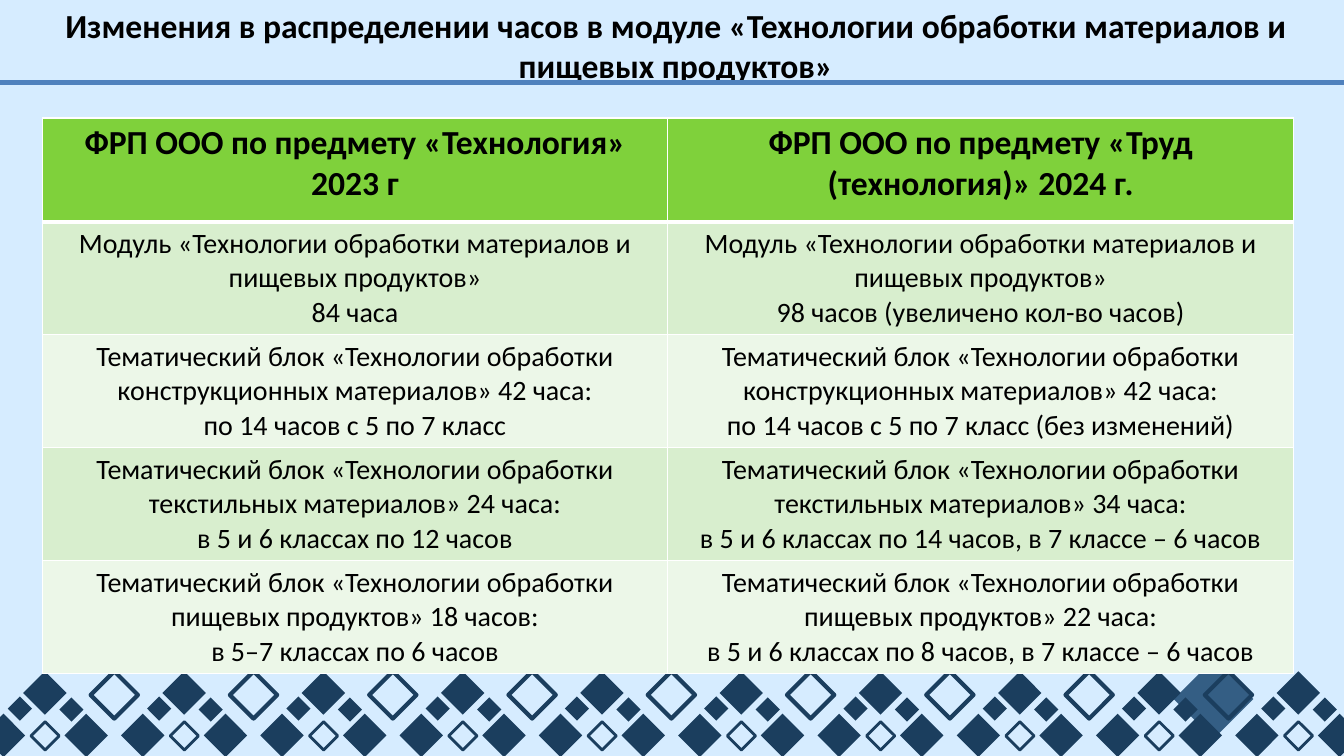
"""Slide comparing module hours in the 2023 and 2024 technology programmes."""
import pptx
import pptx.dml.color
import pptx.enum.shapes
import pptx.enum.text
import pptx.oxml.ns
import pptx.util
from lxml import etree

Pt = pptx.util.Pt
CENTER = pptx.enum.text.PP_ALIGN.CENTER

HEADING = "Изменения в распределении часов в модуле «Технологии обработки материалов и пищевых продуктов»"
HOURS = [
    [["ФРП ООО по предмету «Технология» 2023 г"],
     ["ФРП ООО по предмету «Труд (технология)» 2024 г."]],
    [["Модуль «Технологии обработки материалов и пищевых продуктов»", "84 часа"],
     ["Модуль «Технологии обработки материалов и пищевых продуктов»",
      "98 часов (увеличено кол-во часов)"]],
    [["Тематический блок «Технологии обработки конструкционных материалов» 42 часа:",
      "по 14 часов с 5 по 7 класс"],
     ["Тематический блок «Технологии обработки конструкционных материалов» 42 часа:",
      "по 14 часов с 5 по 7 класс (без изменений)"]],
    [["Тематический блок «Технологии обработки текстильных материалов» 24 часа:",
      "в 5 и 6 классах по 12 часов"],
     ["Тематический блок «Технологии обработки текстильных материалов» 34 часа:",
      "в 5 и 6 классах по 14 часов, в 7 классе – 6 часов"]],
    [["Тематический блок «Технологии обработки пищевых продуктов» 18 часов:",
      "в 5–7 классах по 6 часов"],
     ["Тематический блок «Технологии обработки пищевых продуктов» 22 часа:",
      "в 5 и 6 классах по 8 часов, в 7 классе – 6 часов"]],
]
COLORS = {
    "sky": "D6ECFF", "navy": "1B3E5E", "steel": "345E84", "rule": "4F81BD",
    "header": "7FD13B", "odd": "D8EECE", "even": "ECF7E8",
    "border": "FFFFFF", "text": "000000",
}
HEADING_FONT = {"name": "Calibri", "size": Pt(24), "bold": True}
BODY_FONT = {"name": "Calibri", "size": Pt(20), "bold": False}
HEADING_BOX = {"left": Pt(30.2), "top": Pt(0), "width": Pt(905.8), "height": Pt(65.5)}
HEADING_FRAME = {
    "word_wrap": True,
    "auto_size": pptx.enum.text.MSO_AUTO_SIZE.NONE,
    "vertical_anchor": pptx.enum.text.MSO_ANCHOR.TOP,
}

SLIDE_WIDTH, SLIDE_HEIGHT = 960.5, 540
RULE_Y = 59
TABLE_LEFT, TABLE_TOP, COLUMN_WIDTH = 30.2, 84.3, 447.1
HEADER_HEIGHT, ROW_HEIGHT = 74.2, 79.2

MOTIF_STEP, MOTIF_COUNT = 99.53, 10
MOTIF = [
    (-13, 509.8, 31, 0), (22.1, 515.5, 20.2, 2), (16.6, 479.5, 31, 0),
    (46.1, 509.8, 31, 0), (5.6, 497.5, 17.3, 0), (42.4, 498.2, 17.3, 0),
]
LARGE_DIAMOND = (64.8, 479.5, 33.8, 3)
ACCENT_DIAMOND = (838.8, 470.9, 56.9, 0)


def rgb(color):
    return pptx.dml.color.RGBColor.from_string(COLORS[color])


def apply(target, values):
    for key, value in values.items():
        setattr(target, key, value)


def paint(fill, color):
    fill.solid()
    fill.fore_color.rgb = rgb(color)


def add_diamond(slide, left, top, size, outline, color="navy"):
    diamond = slide.shapes.add_shape(
        pptx.enum.shapes.MSO_SHAPE.DIAMOND, Pt(left), Pt(top), Pt(size), Pt(size))
    diamond.shadow.inherit = False
    if outline:
        diamond.fill.background()
        diamond.line.color.rgb = rgb(color)
        diamond.line.width = Pt(outline)
    else:
        paint(diamond.fill, color)
        diamond.line.fill.background()


def add_ornament(slide):
    add_diamond(slide, *ACCENT_DIAMOND, "steel")
    for index in range(MOTIF_COUNT):
        last = index == MOTIF_COUNT - 1
        for left, *rest in MOTIF if last else MOTIF + [LARGE_DIAMOND]:
            add_diamond(slide, left + index * MOTIF_STEP, *rest)


def add_rule(slide):
    rule = slide.shapes.add_connector(
        pptx.enum.shapes.MSO_CONNECTOR.STRAIGHT, Pt(0), Pt(RULE_Y), Pt(SLIDE_WIDTH), Pt(RULE_Y))
    rule.line.color.rgb = rgb("rule")
    rule.line.width = Pt(3)
    etree.SubElement(rule._element.spPr, pptx.oxml.ns.qn("a:effectLst"))


def write(frame, lines, font):
    for index, line in enumerate(lines):
        paragraph = frame.paragraphs[0] if index == 0 else frame.add_paragraph()
        paragraph.alignment = CENTER
        run = paragraph.add_run()
        run.text = line
        apply(run.font, font)
        run.font.color.rgb = rgb("text")


def add_borders(cell, widths):
    properties = cell._tc.get_or_add_tcPr()
    for side, width in widths.items():
        border = etree.SubElement(
            properties, pptx.oxml.ns.qn("a:ln" + side), w=str(int(Pt(width))))
        solid = etree.SubElement(border, pptx.oxml.ns.qn("a:solidFill"))
        etree.SubElement(solid, pptx.oxml.ns.qn("a:srgbClr"), val=COLORS["border"])


def add_heading(slide):
    heading = slide.shapes.title
    apply(heading, HEADING_BOX)
    apply(heading.text_frame, HEADING_FRAME)
    write(heading.text_frame, [HEADING], HEADING_FONT)


def add_hours(slide):
    row_count, column_count = len(HOURS), len(HOURS[0])
    hours = slide.shapes.add_table(
        row_count, column_count, Pt(TABLE_LEFT), Pt(TABLE_TOP), Pt(column_count * COLUMN_WIDTH),
        Pt(HEADER_HEIGHT + (row_count - 1) * ROW_HEIGHT)).table
    for column in hours.columns:
        column.width = Pt(COLUMN_WIDTH)
    for index, row in enumerate(HOURS):
        is_header = index == 0
        hours.rows[index].height = Pt(HEADER_HEIGHT if is_header else ROW_HEIGHT)
        color = "header" if is_header else "odd" if index % 2 else "even"
        borders = {"L": 1, "R": 1, "T": 3 if index == 1 else 1, "B": 3 if is_header else 1}
        for position, lines in enumerate(row):
            cell = hours.cell(index, position)
            add_borders(cell, borders)
            paint(cell.fill, color)
            write(cell.text_frame, lines, HEADING_FONT if is_header else BODY_FONT)


def main():
    deck = pptx.Presentation()
    apply(deck, {"slide_width": Pt(SLIDE_WIDTH), "slide_height": Pt(SLIDE_HEIGHT)})
    slide = deck.slides.add_slide(deck.slide_layouts[5])
    paint(slide.background.fill, "sky")
    add_ornament(slide)
    add_rule(slide)
    add_heading(slide)
    add_hours(slide)
    deck.save("out.pptx")


if __name__ == "__main__":
    main()
